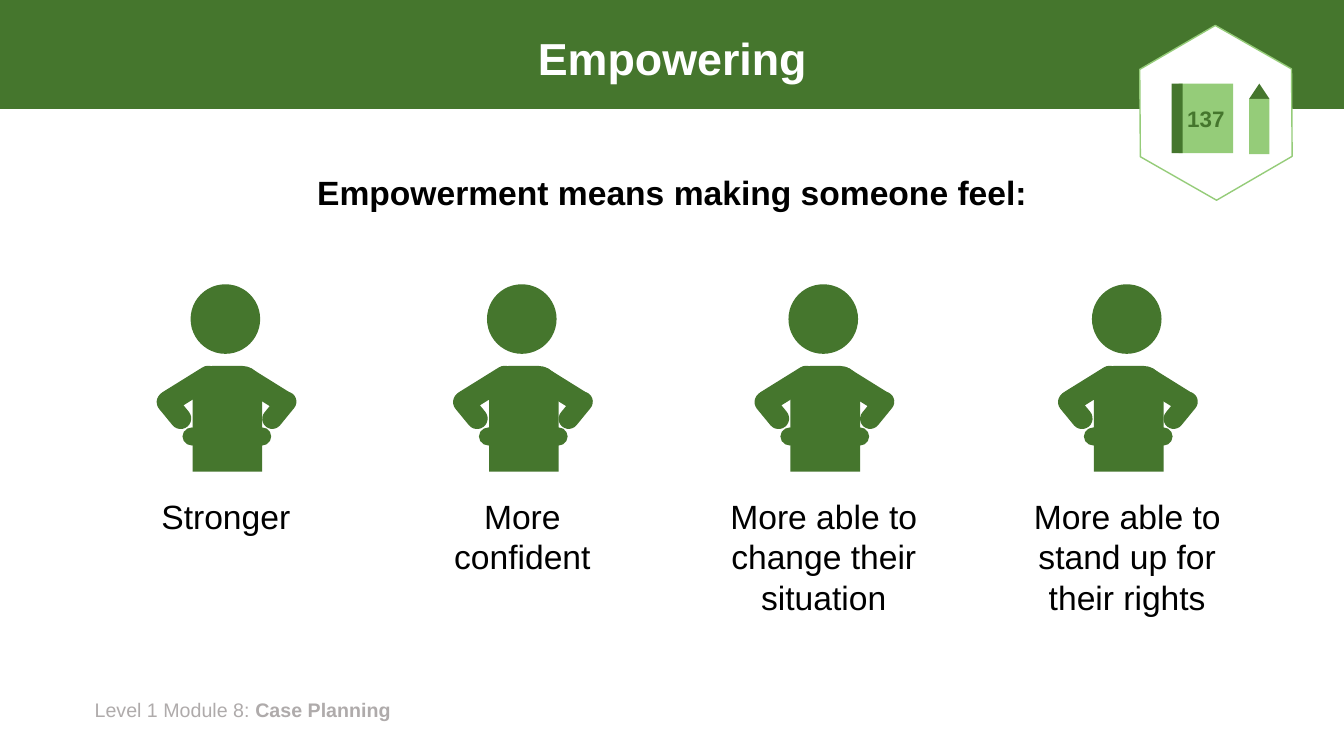
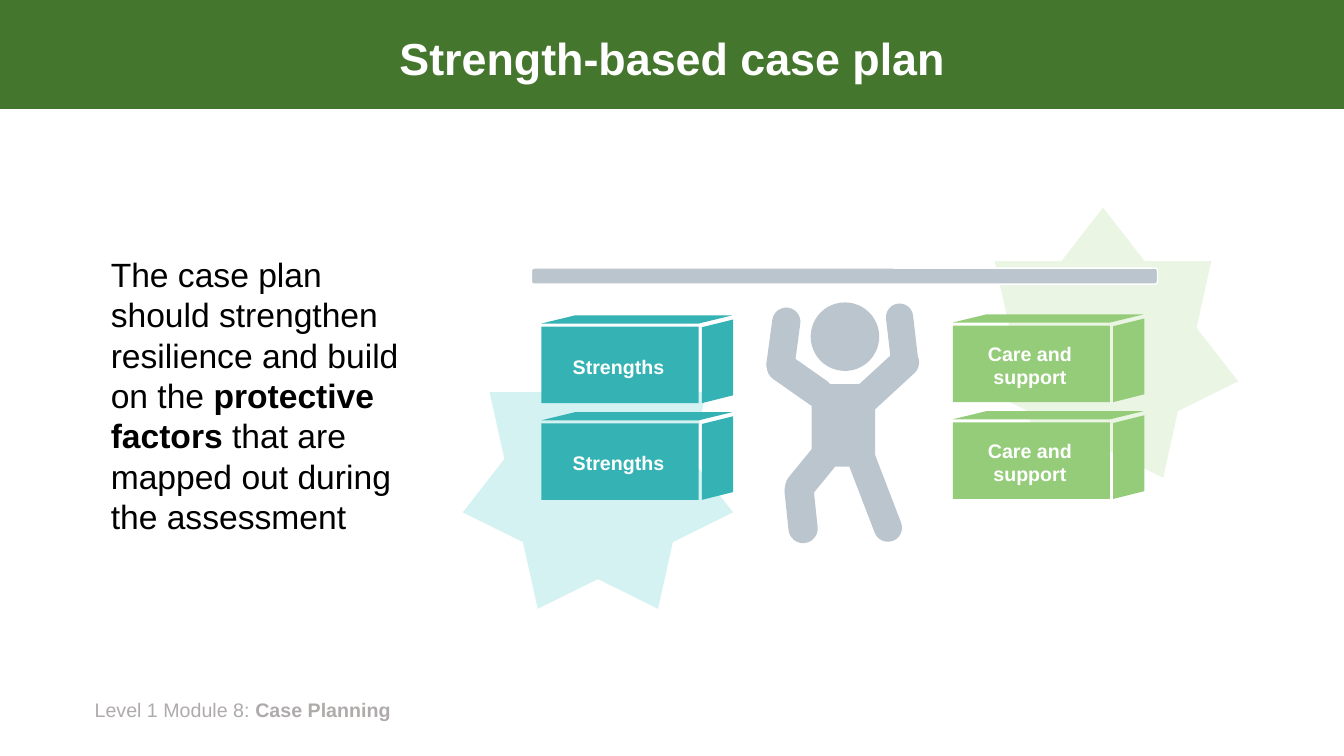
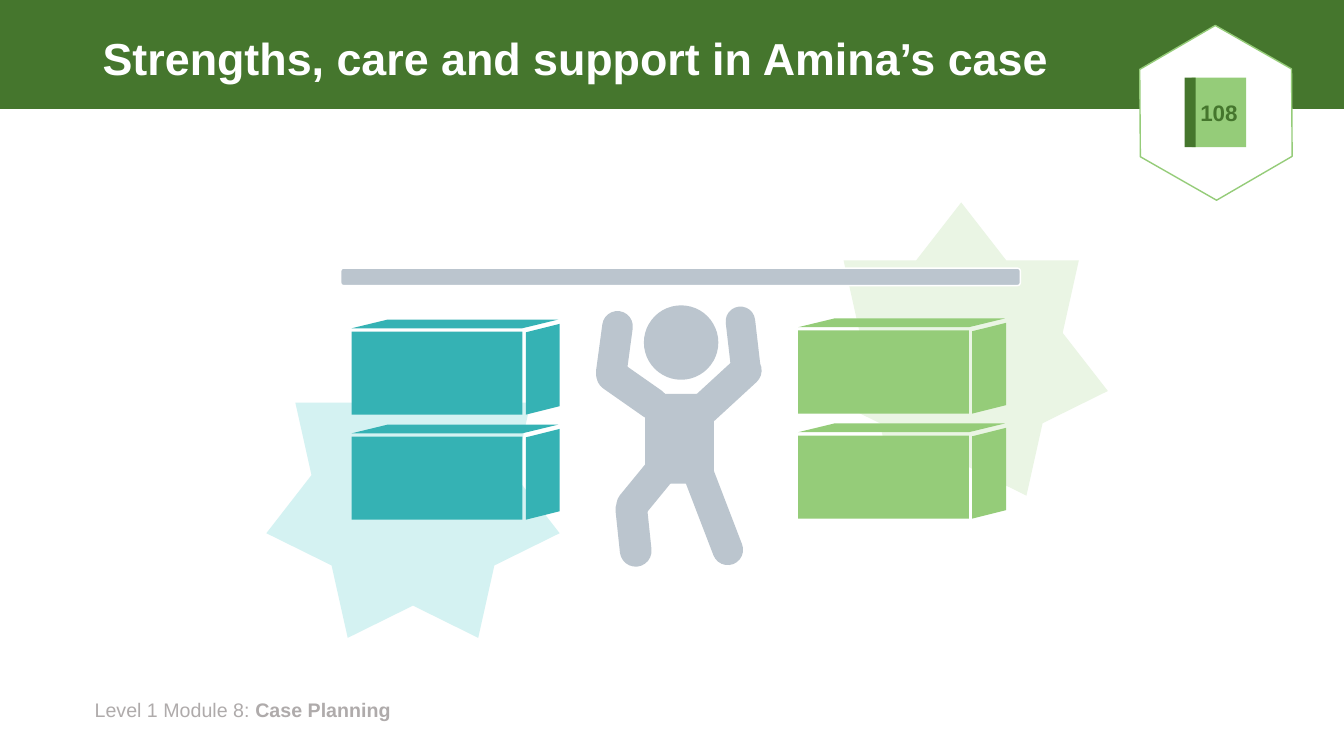
from pptx import Presentation
from pptx.dml.color import RGBColor
from pptx.enum.shapes import MSO_SHAPE
from pptx.enum.text import MSO_ANCHOR, PP_ALIGN
from pptx.oxml.ns import qn
from pptx.util import Inches, Pt

FONT = "Arial"
COLORS = {
    "green": "45762D", "leaf": "95CC79", "mint": "EAF5E4",
    "teal": "35B2B4", "aqua": "D4F2F2", "steel": "BBC5CE",
    "grey": "AFABAB", "black": "000000", "white": "FFFFFF",
}
PILL = (0.5, 0.5)

# Body parts relative to the figure's box: shape, (x, y, w, h), rotation, adjustments
STANDING_FIGURE = [
    (MSO_SHAPE.ROUND_2_SAME_RECTANGLE, (0.29, 0.81, 0.69, 1.05), 0, (0.291, 0)),
    (MSO_SHAPE.ROUND_2_SAME_RECTANGLE, (0.89, 0.72, 0.22, 0.65), 301.9, PILL),
    (MSO_SHAPE.ROUND_2_SAME_RECTANGLE, (1.05, 1.04, 0.2, 0.42), 219.3, PILL),
    (MSO_SHAPE.OVAL, (0.89, 1.42, 0.18, 0.18), 0, ()),
    (MSO_SHAPE.ROUND_2_SAME_RECTANGLE, (0.14, 0.7, 0.22, 0.68), 58.1, PILL),
    (MSO_SHAPE.ROUND_2_SAME_RECTANGLE, (0, 1.04, 0.21, 0.42), 140.7, PILL),
    (MSO_SHAPE.OVAL, (0.19, 1.42, 0.19, 0.18), 0, ()),
    (MSO_SHAPE.OVAL, (0.27, 0, 0.69, 0.69), 0, ()),
]
LIFTING_FIGURE = [
    (MSO_SHAPE.OVAL, (0.41, 0, 0.68, 0.68), 0, ()),
    (MSO_SHAPE.RECTANGLE, (0.42, 0.81, 0.63, 0.82), 0, ()),
    (MSO_SHAPE.ROUNDED_RECTANGLE, (0.32, 1.23, 0.29, 0.8), 39.3, (0.5,)),
    (MSO_SHAPE.ROUNDED_RECTANGLE, (0.9, 1.36, 0.28, 1.04), 159, (0.5,)),
    (MSO_SHAPE.ROUNDED_RECTANGLE, (0.17, 1.72, 0.29, 0.67), 174, (0.5,)),
    (MSO_SHAPE.ROUNDED_RECTANGLE, (1.18, 0.01, 0.27, 0.67), 353.4, (0.5,)),
    (MSO_SHAPE.ROUNDED_RECTANGLE, (0.99, 0.36, 0.29, 0.85), 47.4, (0.5,)),
    (MSO_SHAPE.ROUNDED_RECTANGLE, (0.16, 0.4, 0.29, 0.74), 125, (0.5,)),
    (MSO_SHAPE.ROUNDED_RECTANGLE, (0, 0.05, 0.28, 0.71), 7.7, (0.5,)),
]


def rgb(name):
    return RGBColor.from_string(COLORS[name])


def add_part(shapes, kind, box, fill, rot=0, adj=(), line=None, flip=""):
    sp = shapes.add_shape(kind, *(Inches(v) for v in box))
    sp.shadow.inherit = False
    sp.fill.solid()
    sp.fill.fore_color.rgb = rgb(fill)
    if line:
        sp.line.color.rgb = rgb(line)
        sp.line.width = Pt(1)
    else:
        sp.line.fill.background()
    sp.rotation = rot
    for i, value in enumerate(adj):
        sp.adjustments[i] = value
    for axis in flip:
        sp._element.spPr.find(qn("a:xfrm")).set("flip" + axis, "1")
    return sp


def write(sp, runs, size, color, align=PP_ALIGN.LEFT, anchor=MSO_ANCHOR.TOP,
          wrap=True):
    """Fill a shape with one paragraph of (text, bold) runs."""
    tf = sp.text_frame
    tf.word_wrap = wrap
    tf.vertical_anchor = anchor
    p = tf.paragraphs[0]
    p.alignment = align
    for text, bold in runs:
        r = p.add_run()
        r.text = text
        r.font.name = FONT
        r.font.size = Pt(size)
        r.font.bold = bold
        r.font.color.rgb = rgb(color)
    return p


def add_text(shapes, box, runs, size, color, **style):
    sp = shapes.add_textbox(*(Inches(v) for v in box))
    return write(sp, runs, size, color, **style)


def add_frame(prs, title, align=PP_ALIGN.CENTER):
    """New slide with the title band and the footer."""
    slide = prs.slides.add_slide(prs.slide_layouts[6])
    shapes = slide.shapes
    add_part(shapes, MSO_SHAPE.RECTANGLE, (0, 0, 13.33, 1.08), "green")
    add_text(shapes, (0.84, 6.87, 4.55, 0.34),
             [("Level 1 Module 8: ", False), ("Case Planning", True)], 14, "grey")
    p = add_text(shapes, (0.92, 0.13, 11.5, 0.95), [(title, True)], 32, "white",
                 align=align, anchor=MSO_ANCHOR.MIDDLE)
    p.line_spacing = 0.9
    return shapes


def add_figure(shapes, parts, left, top, color, scale=1):
    group = shapes.add_group_shape()
    for kind, (x, y, w, h), rot, adj in parts:
        box = (left + x * scale, top + y * scale, w * scale, h * scale)
        add_part(group.shapes, kind, box, color, rot, adj)


def add_page_badge(shapes, page, left, top, pencil=False):
    """Hexagon with a workbook at left, top and an optional pencil."""
    group = shapes.add_group_shape().shapes
    add_part(group, MSO_SHAPE.HEXAGON, (11.19, 0.37, 1.74, 1.5), "white", 29.7,
             (0.29,), "leaf")
    cover = add_part(group, MSO_SHAPE.RECTANGLE, (left + 0.07, top, 0.54, 0.69), "leaf")
    write(cover, [(page, True)], 16, "green", PP_ALIGN.CENTER,
          MSO_ANCHOR.MIDDLE, wrap=False)
    add_part(group, MSO_SHAPE.RECTANGLE, (left, top, 0.11, 0.69), "green")
    if pencil:
        x = left + 0.77
        add_part(group, MSO_SHAPE.ISOSCELES_TRIANGLE, (x, top, 0.2, 0.15), "green")
        add_part(group, MSO_SHAPE.RECTANGLE, (x, top + 0.15, 0.2, 0.55), "leaf")


def add_crate(shapes, left, top, scale, color, label):
    """Crate made of a front, a side and a lid."""
    def place(x, y, w, h):
        return left + x * scale, top + y * scale, w * scale, h * scale

    add_part(shapes, MSO_SHAPE.RECTANGLE, place(0, 0.11, 1.56, 0.76), color)
    add_part(shapes, MSO_SHAPE.PARALLELOGRAM, place(1.33, 0.3, 0.83, 0.31), color,
             270, flip="H")
    add_part(shapes, MSO_SHAPE.PARALLELOGRAM, place(0, 0, 1.89, 0.08), color,
             adj=(4.127,), flip="HV")
    if label:
        add_text(shapes, place(0.12, 0.22, 1.29, 0.57), [(label, True)], 14, "white",
                 align=PP_ALIGN.CENTER, anchor=MSO_ANCHOR.MIDDLE)


def add_lifting_scene(shapes, left, top, scale=1, labels=("", "")):
    """Figure under a bar, between two stacks of crates; the bar starts at left, top."""
    # Background stars
    for x, y, color in ((4.33, -0.6, "mint"), (-0.68, 0.7, "aqua")):
        add_part(shapes, MSO_SHAPE.STAR_7_POINT,
                 (left + x * scale, top + y * scale, 2.68 * scale, 2.68 * scale), color)
    # Bar and figure
    add_part(shapes, MSO_SHAPE.ROUNDED_RECTANGLE,
             (left, top, 6.21 * scale, 0.16 * scale), "steel", line="white")
    add_figure(shapes, LIFTING_FIGURE, left + 2.36 * scale, top + 0.34 * scale,
               "steel", scale)
    # Crates
    stacks = ((0.1, 0.47, "teal"), (4.18, 0.46, "leaf"))
    for (x, y, color), label in zip(stacks, labels):
        group = shapes.add_group_shape().shapes
        for row in range(2):
            add_crate(group, left + x * scale, top + (y + 0.96 * row) * scale, scale,
                      color, label)


def build_empowering(prs):
    shapes = add_frame(prs, "Empowering")
    add_text(shapes, (1.42, 1.66, 10.49, 0.5),
             [("Empowerment means making someone feel:", True)], 24, "black",
             align=PP_ALIGN.CENTER)
    # Column centre, caption width, caption
    columns = [
        (2.24, 2.56, "Stronger"),
        (5.18, 1.75, "More confident"),
        (8.17, 2.56, "More able to change their situation"),
        (11.18, 2.56, "More able to stand up for their rights"),
    ]
    for center, width, caption in columns:
        add_figure(shapes, STANDING_FIGURE, center - 0.62, 2.82, "green")
        add_text(shapes, (center - width / 2, 4.87, width, 1.31), [(caption, False)],
                 24, "black", align=PP_ALIGN.CENTER)
    add_page_badge(shapes, "137", 11.62, 0.83, pencil=True)


def build_case_plan(prs):
    shapes = add_frame(prs, "Strength-based case plan")
    add_text(shapes, (1, 2.47, 3.22, 2.93), [
        ("The case plan should strengthen resilience and build on the ", False),
        ("protective factors ", True),
        ("that are mapped out during the assessment", False),
    ], 24, "black")
    add_lifting_scene(shapes, 5.27, 2.66, labels=("Strengths", "Care and support"))


def build_amina_case(prs):
    shapes = add_frame(prs, "Strengths, care and support in Amina’s case", PP_ALIGN.LEFT)
    add_lifting_scene(shapes, 3.38, 2.66, scale=6.74 / 6.21)
    add_page_badge(shapes, "108", 11.75, 0.77)


def main():
    prs = Presentation()
    prs.slide_width = Inches(13.33)
    prs.slide_height = Inches(7.5)
    build_empowering(prs)
    build_case_plan(prs)
    build_amina_case(prs)
    prs.save("out.pptx")


if __name__ == "__main__":
    main()
